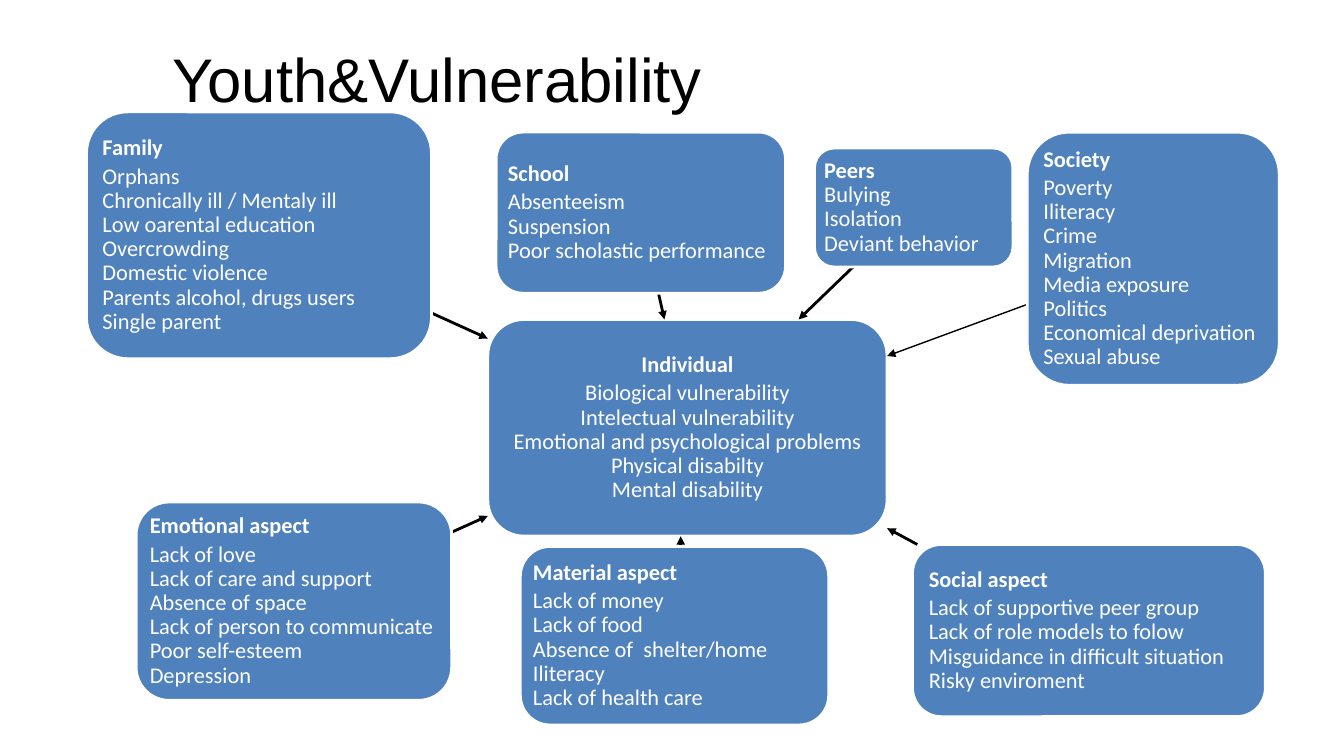
from pptx import Presentation
from pptx.dml.color import RGBColor as RGB
from pptx.enum.shapes import MSO_CONNECTOR as LINK, MSO_SHAPE as SHAPE
from pptx.enum.text import MSO_ANCHOR as ANCHOR, PP_ALIGN as ALIGN
from pptx.oxml.ns import qn
from pptx.util import Cm, Pt
from lxml.etree import SubElement as Sub


def paint(item, color):
    item.solid()
    item.fore_color.rgb = RGB.from_string(color)


def write(para, text, font, size, color, bold=False):
    run = para.add_run()
    run.text = text
    run.font.name = font
    run.font.size = Pt(size)
    run.font.bold = bold
    paint(run.font.fill, color)


deck = Presentation()
deck.slide_width = Cm(33.86)
deck.slide_height = Cm(19.05)
slide = deck.slides.add_slide(deck.slide_layouts[6])

title = slide.shapes.add_textbox(Cm(4.09), Cm(0.79), Cm(23.5), Cm(2.35)).text_frame
title.word_wrap = True
title.vertical_anchor = ANCHOR.MIDDLE
write(title.paragraphs[0], "Youth&Vulnerability", "Arial", 44, "000000")

topics = [
    ("Individual", (12.29, 8.05, 10.06, 5.46), None,
     ["Biological vulnerability", "Intelectual vulnerability",
      "Emotional and psychological problems", "Physical disabilty",
      "Mental disability"]),
    ("Family", (2.18, 2.82, 8.69, 6.22), (10.9, 7.9, 12.29, 8.53),
     ["Orphans", "Chronically ill / Mentaly ill", "Low oarental education",
      "Overcrowding", "Domestic violence", "Parents alcohol, drugs users",
      "Single parent"]),
    ("School", (12.5, 3.33, 7.29, 4.06), (16.59, 7.39, 16.74, 8.05),
     ["Absenteeism", "Suspension", "Poor scholastic performance"]),
    ("Peers", (20.52, 3.73, 5, 3), (21.49, 6.73, 20.12, 8.05),
     ["Bulying", "Isolation", "Deviant behavior"]),
    ("Society", (25.88, 3.33, 6.35, 6.38), (25.88, 7.67, 22.35, 8.97),
     ["Poverty", "Iliteracy", "Crime", "Migration", "Media exposure",
      "Politics", "Economical deprivation", "Sexual abuse"]),
    ("Material aspect", (13.11, 13.77, 7.77, 4.5), (17.15, 13.77, 17.15, 13.51),
     ["Lack of money", "Lack of food", "Absence of  shelter/home",
      "Iliteracy", "Lack of health care"]),
    ("Emotional aspect", (3.43, 12.65, 7.95, 5), (11.38, 13.41, 12.29, 13),
     ["Lack of love", "Lack of care and support", "Absence of space",
      "Lack of person to communicate", "Poor self-esteem", "Depression"]),
    ("Social aspect", (22.99, 13.72, 8.89, 4.34), (23.11, 13.72, 22.35, 13.31),
     ["Lack of supportive peer group", "Lack of role models to folow",
      "Misguidance in difficult situation", "Risky enviroment"]),
]

for name, place, ends, items in topics:
    if ends:
        arrow = slide.shapes.add_connector(LINK.STRAIGHT, *map(Cm, ends))
        arrow.line.width = Pt(1 if name == "Society" else 2)
        paint(arrow.line.fill, "000000")
        Sub(arrow.line._get_or_add_ln(), qn("a:tailEnd"), type="triangle")
        Sub(arrow._element.spPr, qn("a:effectLst"))

    box = slide.shapes.add_shape(SHAPE.ROUNDED_RECTANGLE, *map(Cm, place))
    box.shadow.inherit = False
    paint(box.fill, "4F81BD")
    paint(box.line.fill, "FFFFFF")
    box.line.width = Pt(2)

    frame = box.text_frame
    frame.word_wrap = True
    frame.vertical_anchor = ANCHOR.MIDDLE
    frame.margin_left = Cm(0.2 if name == "Social aspect" else 0.1)
    frame.margin_right = frame.margin_top = frame.margin_bottom = Cm(0.1)
    for row, text in enumerate([name] + items):
        para = frame.add_paragraph() if row else frame.paragraphs[0]
        para.alignment = ALIGN.LEFT if ends else ALIGN.CENTER
        para.line_spacing = 0.9
        para.space_after = Pt(3 if row == 0 and name != "Peers" else 0)
        write(para, text, "Calibri", 16, "FFFFFF", row == 0)

deck.save("out.pptx")
